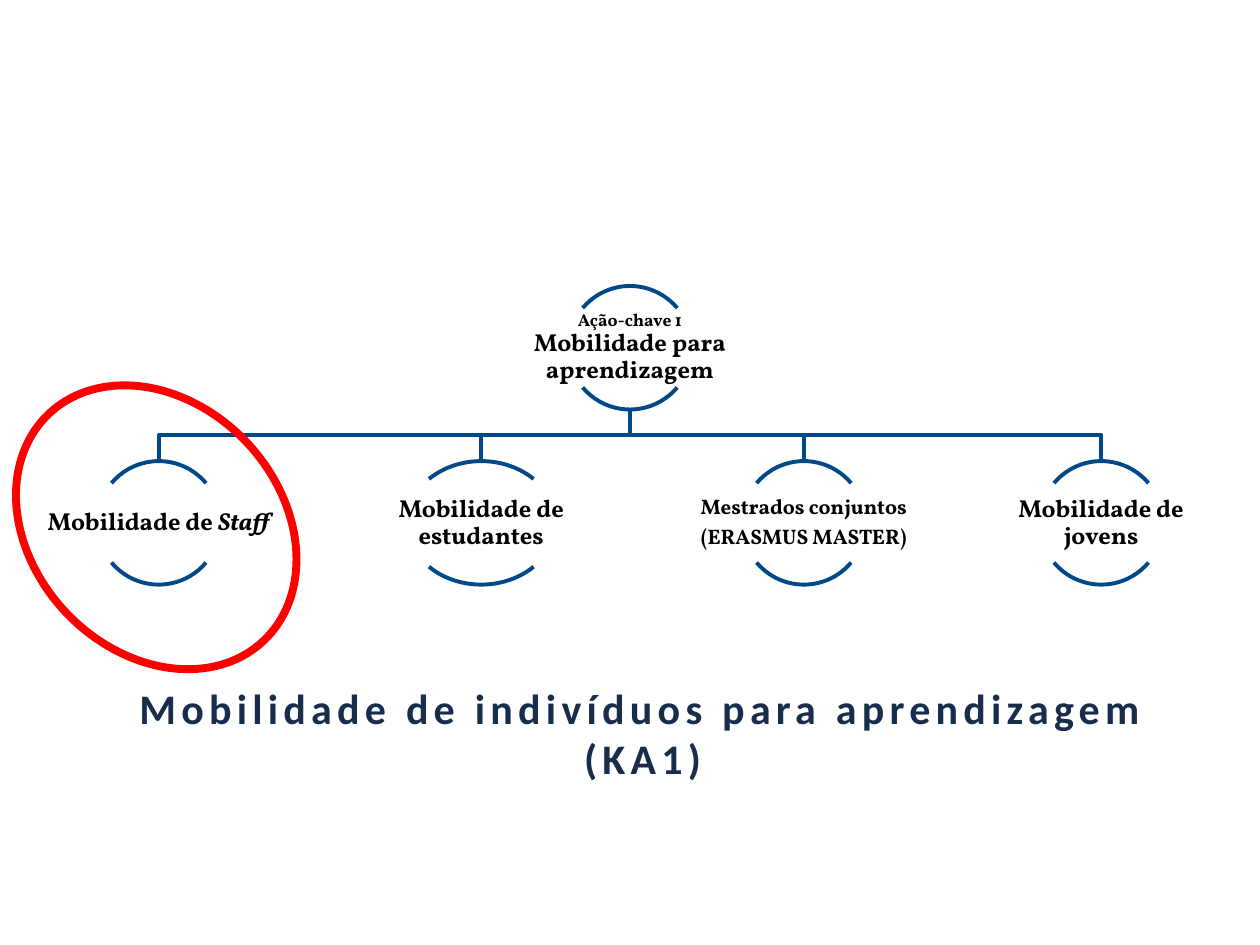
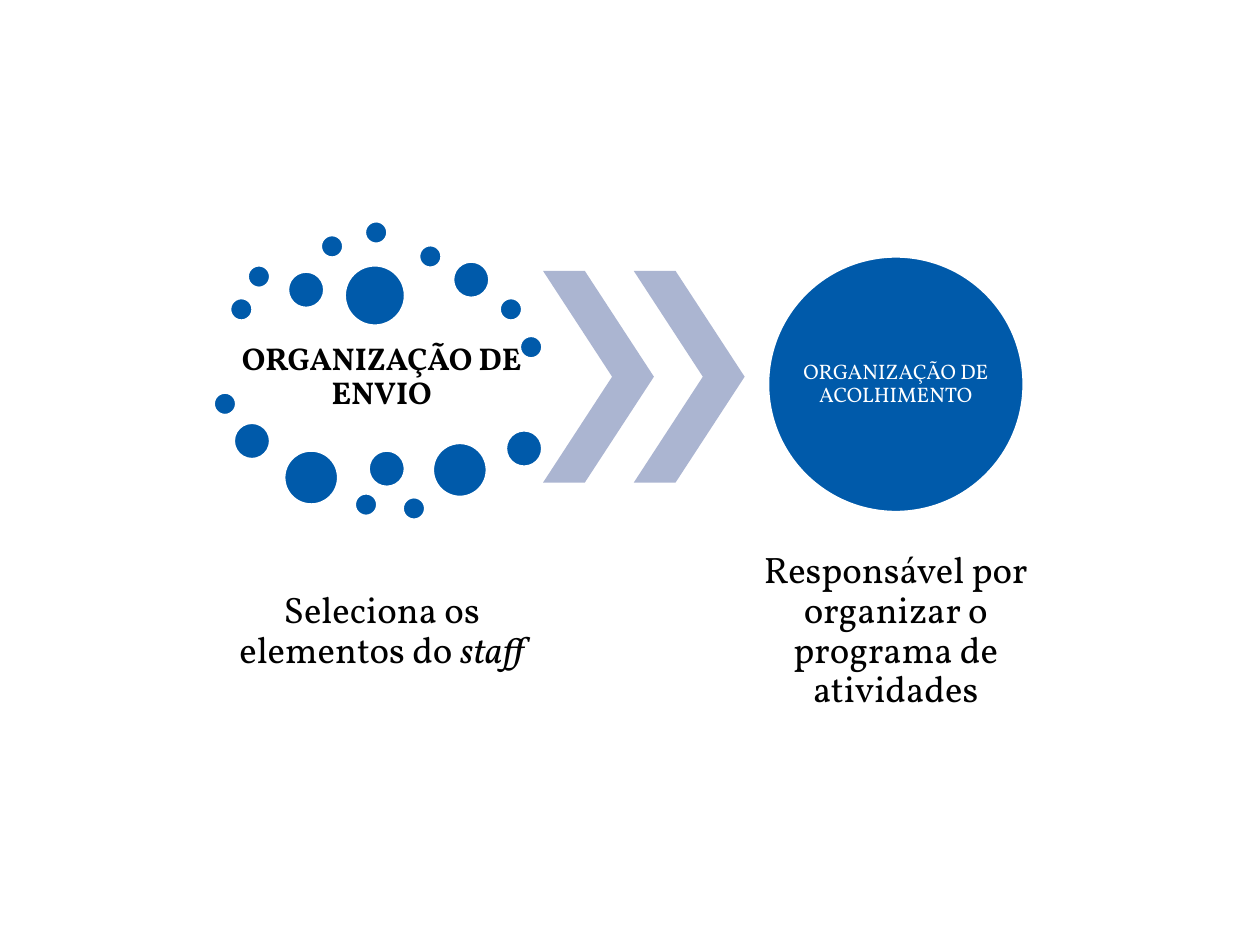
import dataclasses

import pptx
import pptx.dml.color
import pptx.enum.shapes
import pptx.enum.text
import pptx.util

Inches = pptx.util.Inches
Pt = pptx.util.Pt
ShapeKind = pptx.enum.shapes.MSO_SHAPE


def rgb(value):
    return pptx.dml.color.RGBColor.from_string(value)


@dataclasses.dataclass(frozen=True)
class Theme:
    title_font: str = "Calibri"
    body_font: str = "Vollkorn"
    title_color: str = "182C4B"
    text_color: str = "000000"
    white: str = "FFFFFF"
    branch_color: str = "004888"
    circle_color: str = "005AAA"
    chevron_color: str = "ABB5D1"
    highlight_color: str = "FF0000"
    title_size: int = 24
    caption_size: int = 21
    heading_size: int = 18
    node_size: int = 14
    small_size: int = 12
    label_size: int = 10
    line_width: float = 2.25
    highlight_width: float = 4.5
    line_spacing: float = 0.9
    space_after: float = 0.35


THEME = Theme()


@dataclasses.dataclass(frozen=True)
class Line:
    """One paragraph of text, optionally ending in italics."""
    text: str
    size: int
    italic_end: str = ""
    space_after: float = THEME.space_after


@dataclasses.dataclass(frozen=True)
class Node:
    lines: tuple
    width: float = 0.98


ROOT = Node((
    Line("Ação-chave 1", THEME.label_size, space_after=0),
    Line("Mobilidade para aprendizagem", THEME.node_size, space_after=0),
))
BRANCHES = (
    Node((Line("Mobilidade de ", THEME.node_size, "Staff"),)),
    Node((Line("Mobilidade de estudantes", THEME.node_size),), width=1.18),
    Node((Line("Mestrados conjuntos", THEME.small_size),
          Line("(ERASMUS MASTER)", THEME.small_size))),
    Node((Line("Mobilidade de jovens", THEME.node_size),)),
)
NODE_HEIGHT = 0.98
BRANCH_GAP = 0.4
BRANCH_DROP = 0.41

SMALL_DOT, MEDIUM_DOT, LARGE_DOT, LARGEST_DOT = 0.19, 0.3, 0.44, 0.49
# Left and top of each dot, measured from the corner of the sender's region.
SENDER_DOTS = {
    SMALL_DOT: ((0.13, 0.61), (0.27, 0.35), (0.85, 0.11), (1.2, 0),
                (1.63, 0.19), (2.27, 0.61), (2.43, 0.91), (0, 1.36),
                (1.12, 2.16), (1.5, 2.19)),
    MEDIUM_DOT: ((0.59, 0.4), (1.9, 0.32), (0.16, 1.6), (1.23, 1.82),
                 (2.32, 1.66)),
    LARGE_DOT: ((0.56, 1.82), (1.74, 1.76)),
    LARGEST_DOT: ((1.04, 0.35),),
}
CAPTION_WIDTH, CAPTION_HEIGHT = 2.4, 1.48


def add_text(slide, left, top, width, height, lines, bold=False,
             color=THEME.text_color, inset=0.03):
    box = slide.shapes.add_textbox(Inches(left), Inches(top),
                                   Inches(width), Inches(height))
    frame = box.text_frame
    frame.word_wrap = True
    frame.vertical_anchor = pptx.enum.text.MSO_ANCHOR.MIDDLE
    frame.margin_left = frame.margin_right = Inches(inset)
    frame.margin_top = frame.margin_bottom = Inches(inset)
    for index, line in enumerate(lines):
        paragraph = frame.add_paragraph() if index else frame.paragraphs[0]
        paragraph.alignment = pptx.enum.text.PP_ALIGN.CENTER
        paragraph.line_spacing = THEME.line_spacing
        paragraph.space_after = Pt(line.space_after * line.size)
        paragraph.add_run().text = line.text
        if line.italic_end:
            ending = paragraph.add_run()
            ending.text = line.italic_end
        for run in paragraph.runs:
            run.font.name = THEME.body_font
            run.font.size = Pt(line.size)
            run.font.bold = bold
            run.font.color.rgb = rgb(color)
        if line.italic_end:
            ending.font.italic = True


def paint(shape, fill=None, line=None, line_width=THEME.line_width):
    shape.shadow.inherit = False
    if fill:
        shape.fill.solid()
        shape.fill.fore_color.rgb = rgb(fill)
    else:
        shape.fill.background()
    if line:
        shape.line.color.rgb = rgb(line)
        shape.line.width = Pt(line_width)
    else:
        shape.line.fill.background()


def add_shape(slide, kind, left, top, width, height, **style):
    shape = slide.shapes.add_shape(kind, Inches(left), Inches(top),
                                   Inches(width), Inches(height))
    paint(shape, **style)
    return shape


def add_title(slide, text, left, top, width, height):
    title = slide.shapes.title
    title.left, title.top = Inches(left), Inches(top)
    title.width, title.height = Inches(width), Inches(height)
    frame = title.text_frame
    frame.text = text
    frame.word_wrap = True
    frame.auto_size = pptx.enum.text.MSO_AUTO_SIZE.NONE
    frame.vertical_anchor = pptx.enum.text.MSO_ANCHOR.MIDDLE
    paragraph = frame.paragraphs[0]
    paragraph.alignment = pptx.enum.text.PP_ALIGN.CENTER
    font = paragraph.runs[0].font
    font.name = THEME.title_font
    font.size = Pt(THEME.title_size)
    font.bold = True
    font.color.rgb = rgb(THEME.title_color)
    paragraph.runs[0]._r.get_or_add_rPr().set("spc", "300")


def add_node(slide, node, center, top):
    """Draw a label twice as wide as the arcs above and below it."""
    for start, end in ((220, 320), (40, 140)):
        arc = add_shape(slide, ShapeKind.ARC, center - node.width / 2, top,
                        node.width, NODE_HEIGHT, line=THEME.branch_color)
        # Arc angles are stored in 60000ths of a degree, adjustments in 100000ths.
        arc.adjustments[0] = start * 0.6
        arc.adjustments[1] = end * 0.6
    add_text(slide, center - node.width, top + 0.18, 2 * node.width, 0.62,
             node.lines, bold=True, inset=0.01)


def add_branch_line(slide, root_center, center, top):
    middle, bottom = top + BRANCH_DROP / 2, top + BRANCH_DROP
    builder = slide.shapes.build_freeform(Inches(root_center), Inches(top))
    corners = ((root_center, middle), (center, middle), (center, bottom))
    builder.add_line_segments([(Inches(x), Inches(y)) for x, y in corners],
                              close=False)
    paint(builder.convert_to_shape(), line=THEME.branch_color)


def add_hierarchy(slide, left, top, root_center):
    centers = []
    for node in BRANCHES:
        centers.append(left + node.width)
        left += 2 * node.width + BRANCH_GAP
    for center in reversed(centers):
        add_branch_line(slide, root_center, center, top + NODE_HEIGHT)
    add_node(slide, ROOT, root_center, top)
    for node, center in zip(BRANCHES, centers):
        add_node(slide, node, center, top + NODE_HEIGHT + BRANCH_DROP)


def add_circle(slide, left, top, diameter):
    add_shape(slide, ShapeKind.OVAL, left, top, diameter, diameter,
              fill=THEME.circle_color, line=THEME.white)


def add_caption(slide, left, top, line):
    add_text(slide, left, top, CAPTION_WIDTH, CAPTION_HEIGHT, [line])


def add_sender(slide, left, top):
    add_text(slide, left + 0.14, top + 0.85, CAPTION_WIDTH, 0.79,
             [Line("ORGANIZAÇÃO DE ENVIO", THEME.heading_size)], bold=True)
    add_caption(slide, left + 0.14, top + 2.52,
                Line("Seleciona os elementos do ", THEME.caption_size, "staff"))
    for diameter, places in SENDER_DOTS.items():
        for x, y in places:
            add_circle(slide, left + x, top + y, diameter)


def add_chevrons(slide, left, top, count=2, step=0.72):
    for index in range(count):
        chevron = add_shape(slide, ShapeKind.CHEVRON, left + index * step, top,
                            0.88, 1.68, fill=THEME.chevron_color)
        chevron.adjustments[0] = 0.623


def add_host(slide, left, top, diameter=2.04):
    add_circle(slide, left, top, diameter)
    add_text(slide, left, top, diameter, diameter,
             [Line("ORGANIZAÇÃO DE ACOLHIMENTO", THEME.small_size)],
             color=THEME.white, inset=0)
    add_caption(slide, left + (diameter - CAPTION_WIDTH) / 2, top + 2.24,
                Line("Responsável por organizar o programa de atividades",
                     THEME.caption_size))


def build_mobility_slide(presentation):
    slide = presentation.slides.add_slide(
        presentation.slide_layouts.get_by_name("Title Only"))
    add_hierarchy(slide, 0.28, 2.27, root_center=5)
    add_title(slide, "Mobilidade de indivíduos para aprendizagem (KA1)",
              0.61, 5.36, 8.98, 0.91)
    highlight = add_shape(slide, ShapeKind.OVAL, 0, 3.2, 2.48, 1.97,
                          line=THEME.highlight_color,
                          line_width=THEME.highlight_width)
    highlight.rotation = 46.5


def build_organizations_slide(presentation):
    slide = presentation.slides.add_slide(
        presentation.slide_layouts.get_by_name("Blank"))
    add_sender(slide, 1.69, 1.75)
    add_chevrons(slide, 4.31, 2.15)
    add_host(slide, 6.09, 2.03)


def main():
    presentation = pptx.Presentation()
    presentation.slide_width = Inches(10)
    presentation.slide_height = Inches(7.5)
    build_mobility_slide(presentation)
    build_organizations_slide(presentation)
    presentation.save("out.pptx")


if __name__ == "__main__":
    main()
